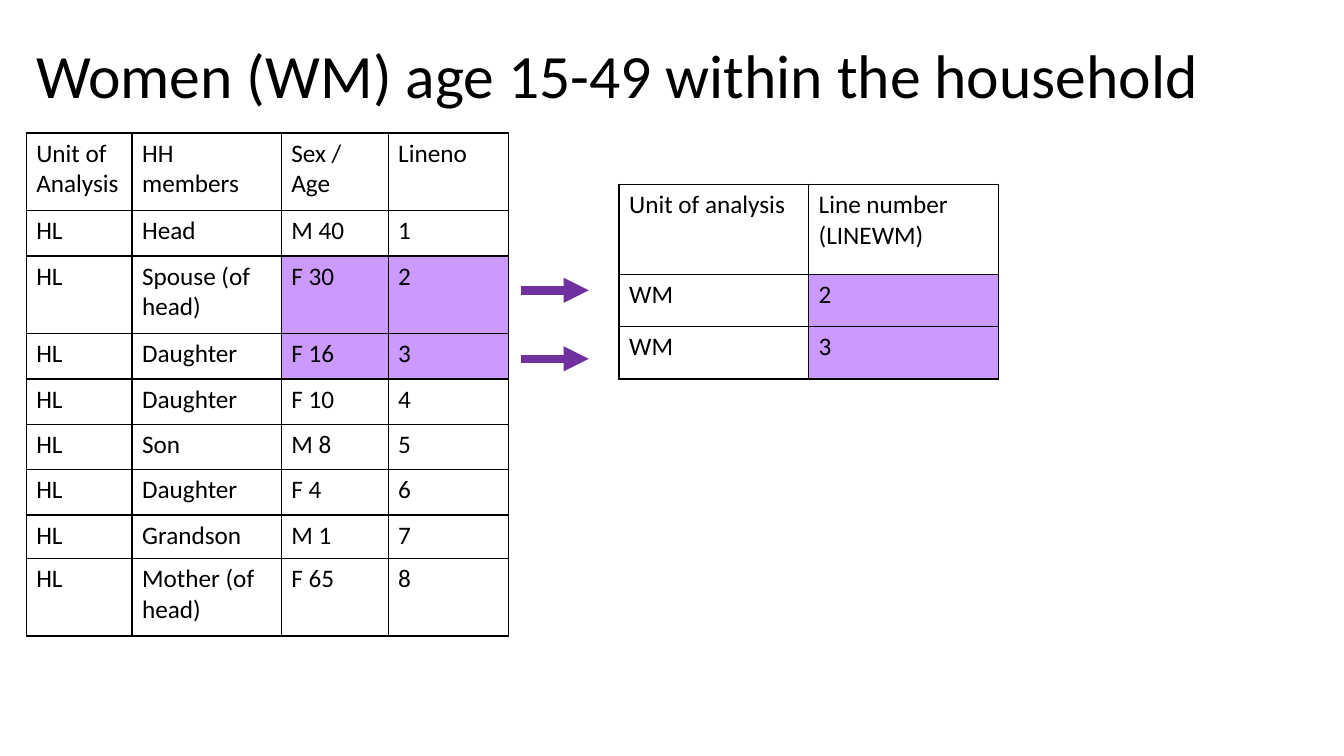
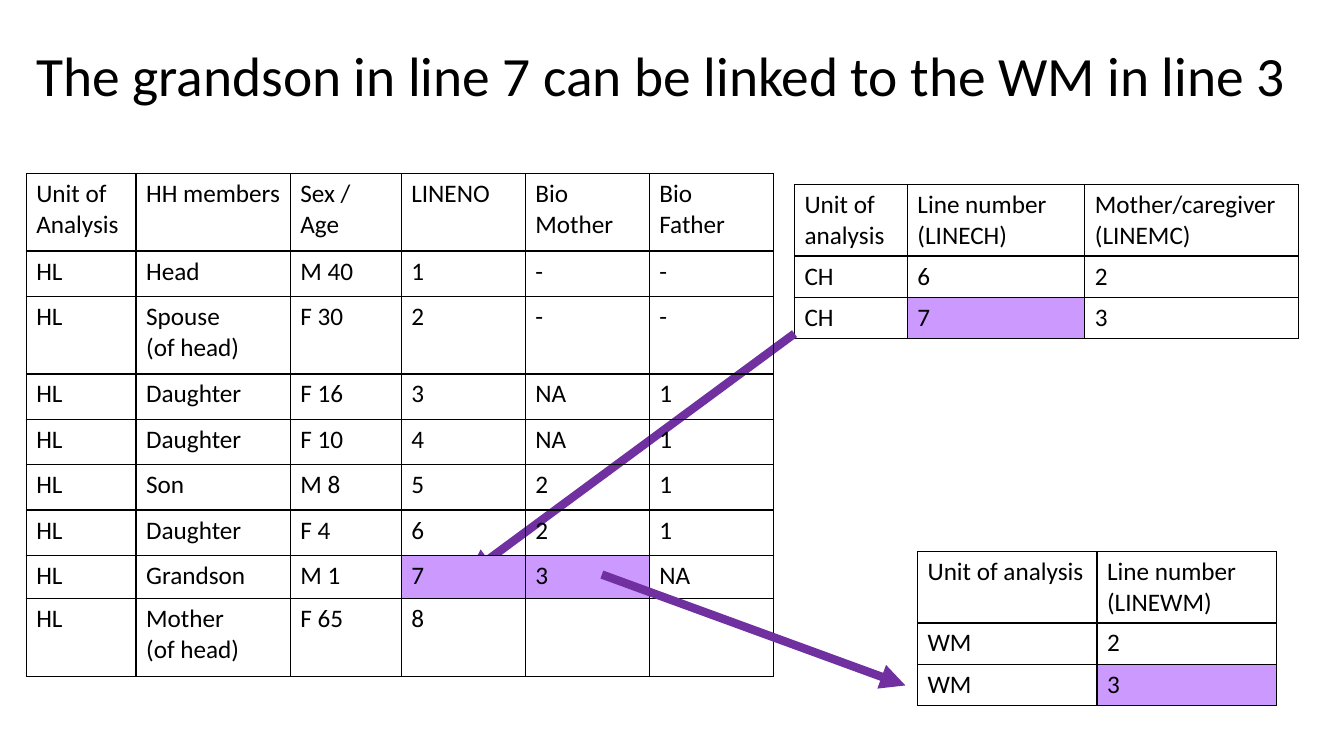
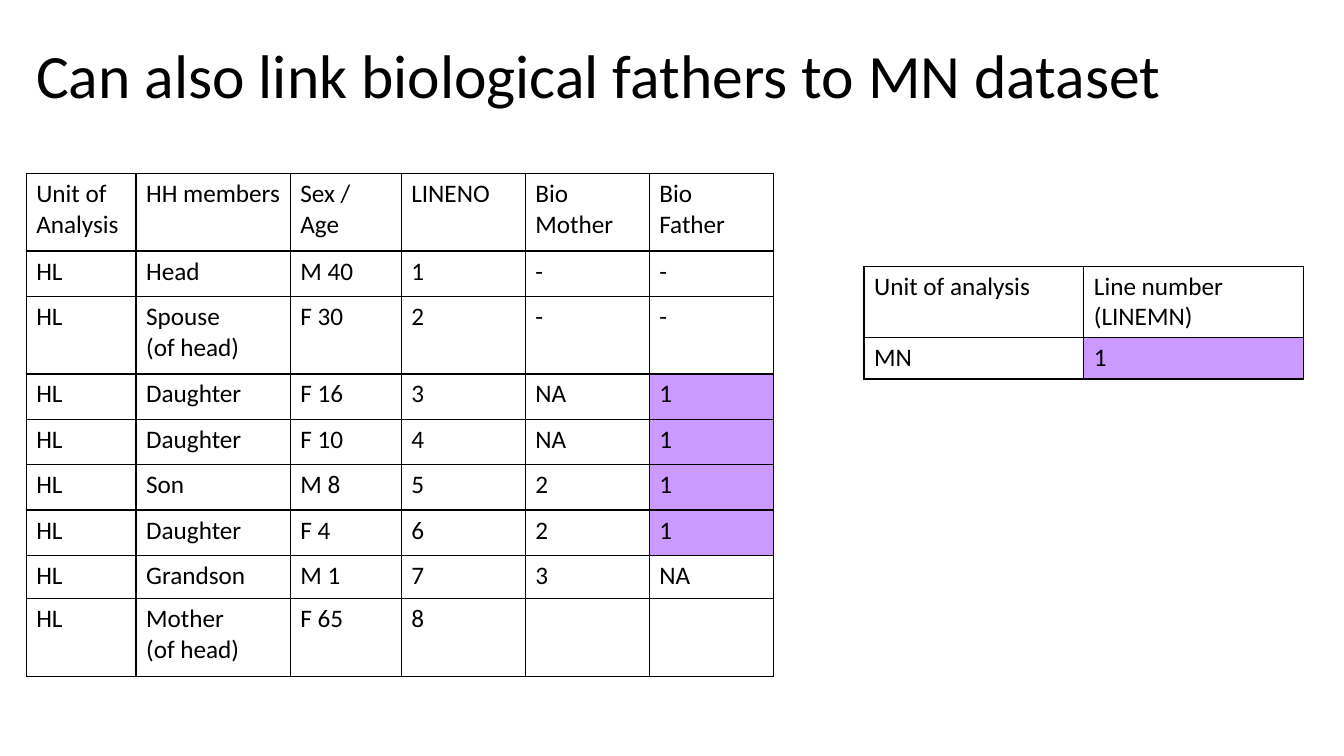
from lxml import etree
from pptx import Presentation
from pptx.dml.color import RGBColor
from pptx.enum.shapes import MSO_CONNECTOR
from pptx.enum.text import MSO_ANCHOR
from pptx.oxml import parse_xml
from pptx.oxml.ns import nsdecls, qn
from pptx.util import Inches, Pt

STRAIGHT = MSO_CONNECTOR.STRAIGHT
MIDDLE = MSO_ANCHOR.MIDDLE


class Theme:
    font = "Calibri"
    ink = RGBColor(0x00, 0x00, 0x00)
    highlight = RGBColor(0xCC, 0x99, 0xFF)
    arrow = RGBColor(0x70, 0x30, 0xA0)
    border = "000000"
    border_width = Pt(1)
    arrow_width = Pt(6)
    title_size = 44
    long_title_size = 39.6
    cell_size = 18


def write(frame, text, size=Theme.cell_size, color=Theme.ink, spacing=None):
    frame.word_wrap = True
    for index, line in enumerate(text.split("\n")):
        paragraph = frame.add_paragraph() if index else frame.paragraphs[0]
        paragraph.line_spacing = spacing
        run = paragraph.add_run()
        run.text = line
        run.font.name = Theme.font
        run.font.size = Pt(size)
        run.font.color.rgb = color


def draw_table(slide, left, top, widths, heights, rows, marked):
    table = slide.shapes.add_table(
        len(rows), len(widths), Inches(left), Inches(top),
        Inches(sum(widths)), Inches(sum(heights))).table
    table.first_row = False
    table.horz_banding = False
    for column, width in zip(table.columns, widths):
        column.width = Inches(width)
    for row, height in zip(table.rows, heights):
        row.height = Inches(height)
    for r, values in enumerate(rows):
        for c, value in enumerate(values):
            cell = table.cell(r, c)
            if value:
                write(cell.text_frame, value)
            properties = cell._tc.get_or_add_tcPr()
            for edge in ("lnL", "lnR", "lnT", "lnB"):
                properties.append(parse_xml(
                    f'<a:{edge} {nsdecls("a")} w="{Theme.border_width}"><a:solidFill>'
                    f'<a:srgbClr val="{Theme.border}"/></a:solidFill></a:{edge}>'))
            if (r, c) in marked:
                cell.fill.solid()
                cell.fill.fore_color.rgb = Theme.highlight
            else:
                cell.fill.background()


members = [
    ["HL", "Head", "M 40", "1"],
    ["HL", "Spouse (of head)", "F 30", "2"],
    ["HL", "Daughter", "F 16", "3"],
    ["HL", "Daughter", "F 10", "4"],
    ["HL", "Son", "M 8", "5"],
    ["HL", "Daughter", "F 4", "6"],
    ["HL", "Grandson", "M 1", "7"],
    ["HL", "Mother (of head)", "F 65", "8"],
]
parents = [("-", "-"), ("-", "-"), ("NA", "1"), ("NA", "1"),
           ("2", "1"), ("2", "1"), ("3", "NA"), ("", "")]
member_header = ["Unit of Analysis", "HH members", "Sex / Age"]
household = [member_header + ["Lineno"]] + members
household_with_parents = [member_header + ["LINENO", "Bio Mother", "Bio Father"]]
for (unit, member, sex_age, line_number), (mother, father) in zip(members, parents):
    household_with_parents.append(
        [unit, member.replace(" (", "\n("), sex_age, line_number, mother, father])

household_heights = [0.77, 0.45, 0.77, 0.45, 0.45, 0.45, 0.45, 0.43, 0.77]
household_widths = [1.05, 1.48, 1.06, 1.19]
parent_widths = [1.09, 1.53, 1.1, 1.23, 1.23, 1.23]
women = [["Unit of analysis", "Line number (LINEWM)"], ["WM", "2"], ["WM", "3"]]
men = [["Unit of analysis", "Line number (LINEMN)"], ["MN", "1"]]
children = [["Unit of analysis", "Line number (LINECH)", "Mother/caregiver\n(LINEMC)"],
            ["CH", "6", "2"], ["CH", "7", "3"]]
dataset_heights = [0.71, 0.41, 0.41]

pages = [
    ("Women (WM) age 15-49 within the household", Theme.title_size, [
        ("table", 0.26, 1.32, household_widths, household_heights, household,
         {(2, 2), (2, 3), (3, 2), (3, 3)}),
        ("arrow", 5.17, 2.88, 5.84, 2.88),
        ("table", 6.14, 1.83, [1.88] * 2, [0.89, 0.52, 0.52], women, {(1, 1), (2, 1)}),
        ("arrow", 5.17, 3.56, 5.84, 3.56),
    ]),
    ("The grandson in line 7 can be linked to the WM in line 3", Theme.long_title_size, [
        ("table", 7.88, 1.83, [1.12, 1.76, 2.12], dataset_heights, children, {(2, 1)}),
        ("arrow", 7.88, 3.31, 4.64, 5.7),
        ("table", 0.26, 1.72, parent_widths, household_heights, household_with_parents,
         {(7, 3), (7, 4)}),
        ("arrow", 5.97, 5.7, 8.98, 6.8),
        ("table", 9.1, 5.47, [1.78] * 2, dataset_heights, women, {(2, 1)}),
    ]),
    ("Can also link biological fathers to MN dataset", Theme.title_size, [
        ("table", 0.26, 1.72, parent_widths, household_heights, household_with_parents,
         {(row, 5) for row in range(3, 7)}),
        ("table", 8.57, 2.64, [2.18] * 2, dataset_heights[:2], men, {(1, 1)}),
    ]),
]

deck = Presentation()
deck.slide_width = Inches(13.33)
deck.slide_height = Inches(7.5)

for title, title_size, parts in pages:
    slide = deck.slides.add_slide(deck.slide_layouts[6])
    heading = slide.shapes.add_textbox(
        Inches(0.26), Inches(0.31), Inches(12.77), Inches(0.93)).text_frame
    heading.vertical_anchor = MIDDLE
    write(heading, title, size=title_size, spacing=0.9)
    for kind, *layout in parts:
        if kind == "table":
            draw_table(slide, *layout)
            continue
        link = slide.shapes.add_connector(STRAIGHT, *[Inches(value) for value in layout])
        link.line.color.rgb = Theme.arrow
        link.line.width = Theme.arrow_width
        etree.SubElement(link.line._get_or_add_ln(), qn("a:tailEnd"), type="triangle")
        etree.SubElement(link._element.spPr, qn("a:effectLst"))

deck.save("out.pptx")
